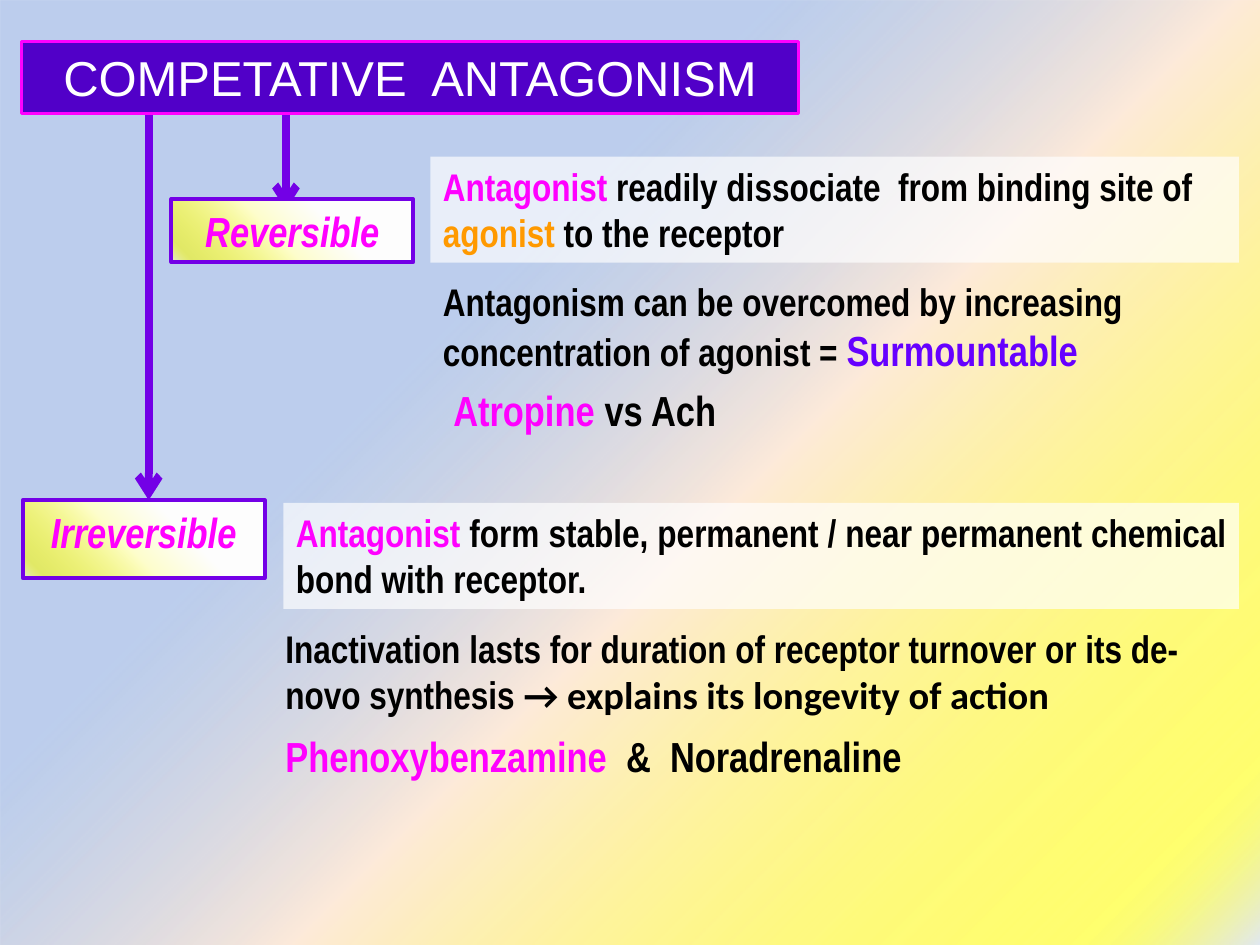
from lxml.etree import SubElement
from pptx import Presentation
from pptx.dml.color import RGBColor
from pptx.enum.shapes import MSO_CONNECTOR, MSO_SHAPE
from pptx.enum.text import MSO_ANCHOR, MSO_AUTO_SIZE, PP_ALIGN
from pptx.oxml.ns import qn
from pptx.util import Pt

COLORS = {
    "black": "000000", "white": "FFFFFF", "magenta": "FF00FF",
    "orange": "FF9900", "violet": "6600FF", "purple": "7300E6",
    "indigo": "5100C8", "blue": "9AB5E4", "peach": "FDEADA",
    "yellow": "FFFF00", "cream": "FFFFCC", "mist": "E1E8F5",
}
WIDTH, HEIGHT = 720, 540

BACKDROP = {"angle": 45, "stops": [
    (35, "blue", 66), (56, "peach", 100), (92, "yellow", 56), (100, "mist", 100)]}
LABEL_FILL = {"angle": 135, "stops": [
    (35, "white", 100), (57, "cream", 100), (92, "yellow", 56), (100, "mist", 100)]}
VEIL = {"color": "white", "opacity": 68}

BODY = {"name": "Arial Narrow", "size": Pt(22), "bold": True}
STRONG = BODY | {"size": Pt(24)}
LABEL = STRONG | {"italic": True}
HEADING = {"name": "Arial", "size": Pt(28), "bold": False}
CALIBRI = BODY | {"name": "Calibri"}

TITLE = ((12.2, 23.8, 444.2, 41), [("COMPETATIVE  ANTAGONISM", "white", HEADING)])
LABELS = [
    ((97.9, 113.8, 138.2, 36), [("Reversible", "magenta", LABEL)]),
    ((13, 285.8, 138.2, 44.6), [("Irreversible", "magenta", LABEL)]),
]
ARROWS = [(163.4, 66, 120), (85, 66, 285.8)]
DEFINITIONS = [
    ((246, 89.5, 462, 60.6), PP_ALIGN.LEFT, [
        ("Antagonist", "magenta", BODY),
        (" readily dissociate  from binding site of ", "black", BODY),
        ("agonist", "orange", BODY),
        (" to the receptor", "black", BODY)]),
    ((162, 287.4, 546, 60.6), PP_ALIGN.JUSTIFY, [
        ("Antagonist", "magenta", BODY),
        (" form stable, permanent / near permanent chemical bond with receptor.",
         "black", BODY)]),
]
NOTES = [
    ((156, 353.6, 558, 60.6), [
        ("Inactivation lasts for duration of receptor turnover or its de- novo synthesis ",
         "black", BODY),
        ("→ explains its longevity of action", "black", CALIBRI)]),
    ((246, 155.4, 456, 63), [
        ("Antagonism can be overcomed by increasing concentration of agonist = ",
         "black", BODY),
        ("Surmountable", "violet", STRONG)]),
    ((156, 414, 371, 36), [
        ("Phenoxybenzamine", "magenta", STRONG),
        ("  &  Noradrenaline", "black", STRONG)]),
    ((252, 216, 282, 36), [
        ("Atropine ", "magenta", STRONG), ("vs Ach", "black", STRONG)]),
]


def rgb(color):
    return RGBColor.from_string(COLORS[color])


def add_alpha(color_element, opacity):
    if opacity < 100:
        SubElement(color_element, qn("a:alpha"), val=str(opacity * 1000))


def paint(shape, fill):
    if "stops" not in fill:
        shape.fill.solid()
        shape.fill.fore_color.rgb = rgb(fill["color"])
        color_element = shape.element.spPr.find(qn("a:solidFill"))[0]
        add_alpha(color_element, fill.get("opacity", 100))
        return
    shape.fill.gradient()
    shape.fill.gradient_angle = 360 - fill["angle"]
    stop_list = shape.element.spPr.find(qn("a:gradFill")).find(qn("a:gsLst"))
    for stop in list(stop_list):
        stop_list.remove(stop)
    for position, color, opacity in fill["stops"]:
        stop = SubElement(stop_list, qn("a:gs"), pos=str(position * 1000))
        add_alpha(SubElement(stop, qn("a:srgbClr"), val=COLORS[color]), opacity)


def write(shape, runs, align):
    frame = shape.text_frame
    settings = {"word_wrap": True, "vertical_anchor": MSO_ANCHOR.TOP,
                "auto_size": MSO_AUTO_SIZE.SHAPE_TO_FIT_TEXT}
    for key, value in settings.items():
        setattr(frame, key, value)
    paragraph = frame.paragraphs[0]
    paragraph.alignment = align
    for text, color, style in runs:
        run = paragraph.add_run()
        run.text = text
        run.font.color.rgb = rgb(color)
        for key, value in style.items():
            setattr(run.font, key, value)


def add_panel(slide, box, fill, runs=(), align=PP_ALIGN.CENTER, border=None):
    panel = slide.shapes.add_shape(MSO_SHAPE.RECTANGLE, *map(Pt, box))
    panel.shadow.inherit = False
    paint(panel, fill)
    if border:
        color, weight = border
        panel.line.color.rgb = rgb(color)
        panel.line.width = Pt(weight)
    else:
        panel.line.fill.background()
    if runs:
        write(panel, runs, align)


def add_arrow(slide, x, top, bottom):
    arrow = slide.shapes.add_connector(
        MSO_CONNECTOR.STRAIGHT, Pt(x), Pt(top), Pt(x), Pt(bottom))
    arrow.line.color.rgb = rgb("purple")
    arrow.line.width = Pt(4.5)
    properties = arrow.element.spPr
    SubElement(properties.find(qn("a:ln")), qn("a:tailEnd"), type="arrow")
    SubElement(properties, qn("a:effectLst"))


def main():
    deck = Presentation()
    deck.slide_width, deck.slide_height = Pt(WIDTH), Pt(HEIGHT)
    slide = deck.slides.add_slide(deck.slide_layouts[6])

    add_panel(slide, (0, 0, WIDTH, HEIGHT), BACKDROP)
    for arrow, (box, runs) in zip(ARROWS, LABELS):
        add_arrow(slide, *arrow)
        add_panel(slide, box, LABEL_FILL, runs, border=("purple", 2.25))
    for box, align, runs in DEFINITIONS:
        add_panel(slide, box, VEIL, runs, align)
    for box, runs in NOTES:
        write(slide.shapes.add_textbox(*map(Pt, box)), runs, PP_ALIGN.LEFT)
    box, runs = TITLE
    add_panel(slide, box, {"color": "indigo"}, runs, border=("magenta", 1.5))

    deck.save("out.pptx")


if __name__ == "__main__":
    main()
